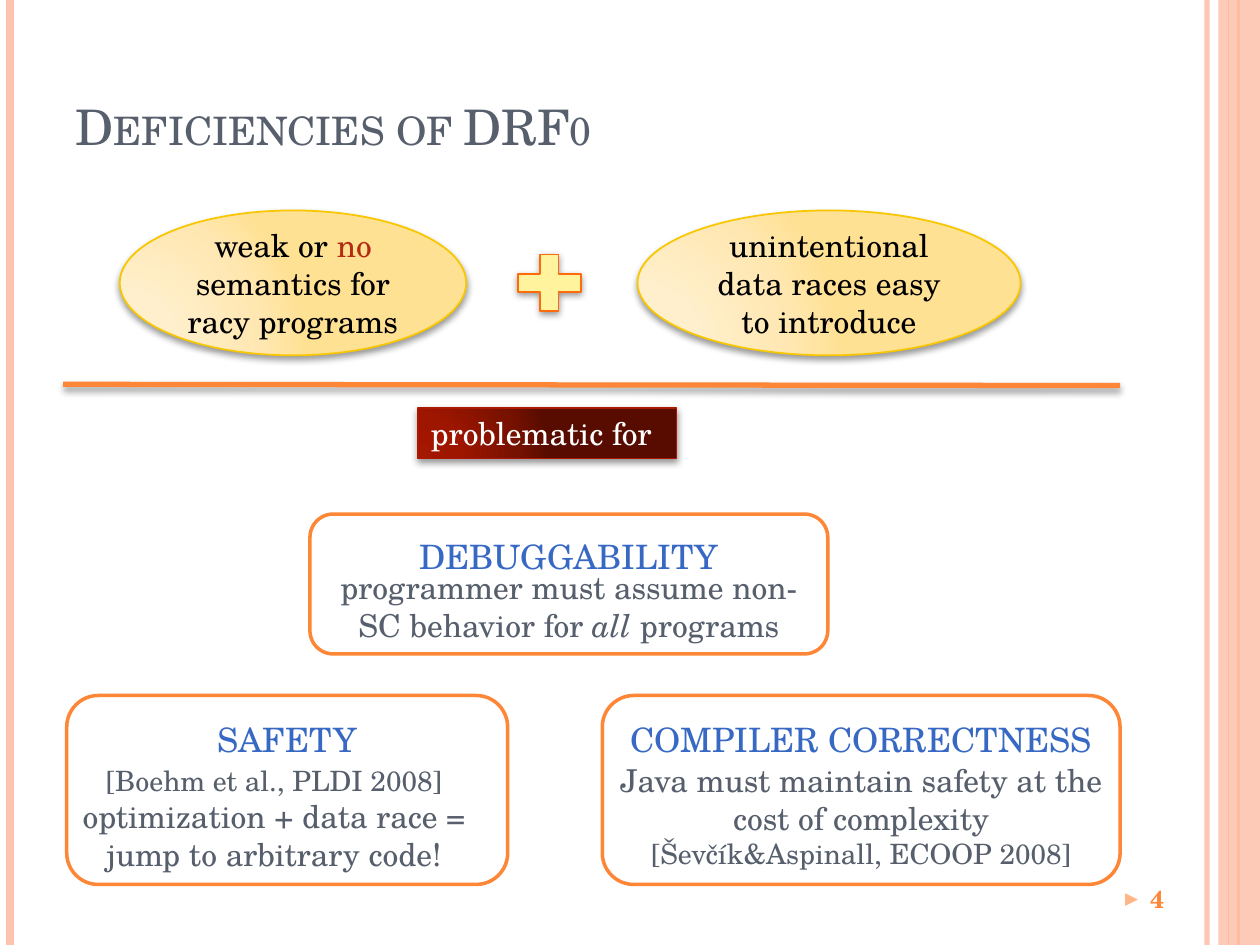
"""Build the slide on the deficiencies of the DRF0 memory model."""
from dataclasses import dataclass
from typing import Optional

from lxml import etree
from pptx import Presentation
from pptx.dml.color import RGBColor
from pptx.enum.shapes import MSO_CONNECTOR, MSO_SHAPE
from pptx.enum.text import MSO_ANCHOR, PP_ALIGN
from pptx.oxml.ns import qn
from pptx.util import Inches, Pt

STRAIGHT = MSO_CONNECTOR.STRAIGHT
OVAL, RECT, ROUNDED = MSO_SHAPE.OVAL, MSO_SHAPE.RECTANGLE, MSO_SHAPE.ROUNDED_RECTANGLE
PLUS, TRIANGLE = MSO_SHAPE.MATH_PLUS, MSO_SHAPE.ISOSCELES_TRIANGLE
TOP, MIDDLE, BOTTOM = MSO_ANCHOR.TOP, MSO_ANCHOR.MIDDLE, MSO_ANCHOR.BOTTOM
LEFT, CENTER = PP_ALIGN.LEFT, PP_ALIGN.CENTER


@dataclass(frozen=True)
class Theme:
    font: str = "TeX Gyre Schola"
    title: int = 28
    heading: int = 24
    body: int = 18
    cite: int = 16
    number: int = 14
    white: str = "FFFFFF"
    black: str = "000000"
    slate: str = "575F6D"
    blue: str = "3668C4"
    red: str = "B32C16"
    orange: str = "FE8637"
    peach: str = "FEC3AE"
    marker: str = "FEB687"
    plus: str = "FFF39D"
    plus_line: str = "FF6B0A"
    gold: str = "F8C700"
    brick: str = "AC1800"
    gold_stops: tuple = ("FFF0D1", "FFEFCC", "FFE7B1", "FFE193")
    brick_stops: tuple = ("A41700", "9F1600", "771100", "580C00")


T = Theme()


@dataclass(frozen=True)
class Run:
    text: str
    size: int = T.body
    color: str = T.slate
    bold: bool = False
    italic: bool = False
    small_caps: bool = False


@dataclass(frozen=True)
class Rule:
    start: tuple
    end: tuple
    color: str
    width: float
    alpha: int = 100
    shadow: Optional[tuple] = None


@dataclass(frozen=True)
class Card:
    box: tuple
    heading: str
    text_box: tuple
    paragraphs: list


SOFT, TIGHT = (40, 2), (42, 1.6)
STOP_POSITIONS = (0, 30, 75, 100)

RULES = [
    Rule((9.58, 0), (9.58, 7.5), T.peach, 3, alpha=93),
    Rule((0.08, 0), (0.08, 7.5), T.peach, 4.5),
    Rule((9.83, 0), (9.83, 7.5), T.orange, 1.5),
    Rule((9.75, 0), (9.75, 7.5), T.orange, 0.75),
]
DIVIDER = Rule((0.5, 3.05), (8.89, 3.06), T.orange, 3, shadow=SOFT)

CAUSES = [
    ((0.95, 1.67, 2.75, 1.15), [Run("weak or ", color=T.black), Run("no", color=T.red),
                                Run(" semantics for racy programs", color=T.black)]),
    ((5.06, 1.67, 3.04, 1.15), [Run("unintentional data races easy to introduce", color=T.black)]),
]

CARDS = [
    Card((2.46, 4.08, 4.11, 1.11), "debuggability", (2.46, 4.46, 4.11, 0.71),
         [[Run("programmer must assume non-SC behavior for "), Run("all", italic=True),
           Run(" programs")]]),
    Card((0.53, 5.52, 3.5, 1.5), "safety", (0.32, 6.01, 3.71, 1.01),
         [[Run("[Boehm et al., PLDI 2008]", T.cite)],
          [Run("optimization + data race = jump to arbitrary code!")]]),
    Card((4.78, 5.52, 4.11, 1.5), "compiler correctness", (4.78, 5.99, 4.11, 1.31),
         [[Run("Java must maintain safety at the cost of complexity")],
          [Run("[Ševčík&Aspinall, ECOOP 2008]", T.cite)]]),
]


def inches(values: tuple) -> list:
    """Convert numbers to lengths."""
    return [Inches(v) for v in values]


def add_color(parent, color: str, alpha: int = 100) -> None:
    """Append an RGB colour element with its opacity."""
    clr = etree.SubElement(parent, qn("a:srgbClr"), val=color)
    if alpha < 100:
        etree.SubElement(clr, qn("a:alpha"), val=str(alpha * 1000))


def set_opacity(sp, alpha: int) -> None:
    """Make the first colour of a shape partly transparent."""
    clr = next(sp._element.spPr.iter(qn("a:srgbClr")))
    etree.SubElement(clr, qn("a:alpha"), val=str(alpha * 1000))


def add_shadow(effects, shadow: Optional[tuple]) -> None:
    """Put a downward outer shadow in an effect list."""
    if shadow:
        alpha, distance = shadow
        outer = etree.SubElement(effects, qn("a:outerShdw"), blurRad=str(Pt(4)),
                                 dist=str(Pt(distance)), dir="5400000", rotWithShape="0")
        add_color(outer, T.black, alpha)


def set_gradient(sp, stops: tuple) -> None:
    """Fill a shape with a circular gradient."""
    sp.fill.gradient()
    grad = sp._element.spPr.find(qn("a:gradFill"))
    for child in list(grad):
        grad.remove(child)
    gs_list = etree.SubElement(grad, qn("a:gsLst"))
    for pos, color in zip(STOP_POSITIONS, stops):
        add_color(etree.SubElement(gs_list, qn("a:gs"), pos=str(pos * 1000)), color)
    circle = etree.SubElement(grad, qn("a:path"), path="circle")
    etree.SubElement(circle, qn("a:fillToRect"), l="5000", t="100000", r="120000", b="10000")


def write(sp, paragraphs: list, align=CENTER, anchor=TOP, wrap: bool = True) -> None:
    """Write formatted paragraphs into a shape."""
    tf = sp.text_frame
    tf.word_wrap, tf.vertical_anchor = wrap, anchor
    for i, runs in enumerate(paragraphs):
        p = tf.add_paragraph() if i else tf.paragraphs[0]
        p.alignment = align
        for item in runs:
            r = p.add_run()
            r.text = item.text
            r.font.name, r.font.size = T.font, Pt(item.size)
            r.font.bold, r.font.italic = item.bold, item.italic
            r.font.color.rgb = RGBColor.from_string(item.color)
            if item.small_caps:
                r._r.get_or_add_rPr().set("cap", "small")


def draw_shape(shapes, kind, box: tuple, fill, line: Optional[str] = None,
               width: float = 1, shadow: Optional[tuple] = None):
    """Draw a preset shape with a solid or gradient fill."""
    sp = shapes.add_shape(kind, *inches(box))
    if isinstance(fill, tuple):
        set_gradient(sp, fill)
    else:
        sp.fill.solid()
        sp.fill.fore_color.rgb = RGBColor.from_string(fill)
    if line:
        sp.line.color.rgb = RGBColor.from_string(line)
        sp.line.width = Pt(width)
    else:
        sp.line.fill.background()
    sp.shadow.inherit = False
    add_shadow(sp._element.spPr.find(qn("a:effectLst")), shadow)
    return sp


def draw_rule(shapes, rule: Rule) -> None:
    """Draw a straight line."""
    line = shapes.add_connector(STRAIGHT, *inches(rule.start + rule.end))
    line.line.color.rgb = RGBColor.from_string(rule.color)
    line.line.width = Pt(rule.width)
    if rule.alpha < 100:
        set_opacity(line, rule.alpha)
    add_shadow(etree.SubElement(line._element.spPr, qn("a:effectLst")), rule.shadow)


def draw_card(shapes, card: Card) -> None:
    """Draw a grouped rounded box with its heading and text."""
    group = shapes.add_group_shape().shapes
    sp = draw_shape(group, ROUNDED, card.box, T.white, T.orange, 2)
    write(sp, [[Run(card.heading, T.heading, T.blue, small_caps=True)]])
    write(group.add_textbox(*inches(card.text_box)), card.paragraphs)


def main() -> None:
    """Build and save the slide."""
    prs = Presentation()
    prs.slide_width, prs.slide_height = Inches(10), Inches(7.5)
    s = prs.slides.add_slide(prs.slide_layouts[5])
    shapes = s.shapes

    for rule in RULES:
        draw_rule(shapes, rule)
    set_opacity(draw_shape(shapes, RECT, (9.67, 0, 0.33, 7.5), T.peach), 87)
    draw_shape(shapes, TRIANGLE, (8.93, 7.09, 0.1, 0.1), T.marker).rotation = 90

    title = shapes.title
    title.left, title.top, title.width, title.height = inches((0.5, 0.3, 8.39, 0.98))
    write(title, [[Run("Deficiencies of DRF0", T.title, small_caps=True)]], LEFT, BOTTOM)
    number = shapes.add_textbox(*inches((8.85, 6.85, 0.67, 0.57)))
    write(number, [[Run("4", T.number, T.orange, bold=True)]], anchor=MIDDLE)

    for box, runs in CAUSES:
        sp = draw_shape(shapes, OVAL, box, T.gold_stops, T.gold, shadow=SOFT)
        write(sp, [runs], anchor=MIDDLE)
    draw_shape(shapes, PLUS, (4.02, 1.94, 0.68, 0.61), T.plus, T.plus_line, shadow=TIGHT)
    draw_rule(shapes, DIVIDER)
    label = draw_shape(shapes, RECT, (3.32, 3.24, 2.05, 0.4), T.brick_stops, T.brick, shadow=TIGHT)
    write(label, [[Run("problematic for", color=T.white)]], LEFT, wrap=False)

    for card in CARDS:
        draw_card(shapes, card)
    prs.save("out.pptx")


if __name__ == "__main__":
    main()
